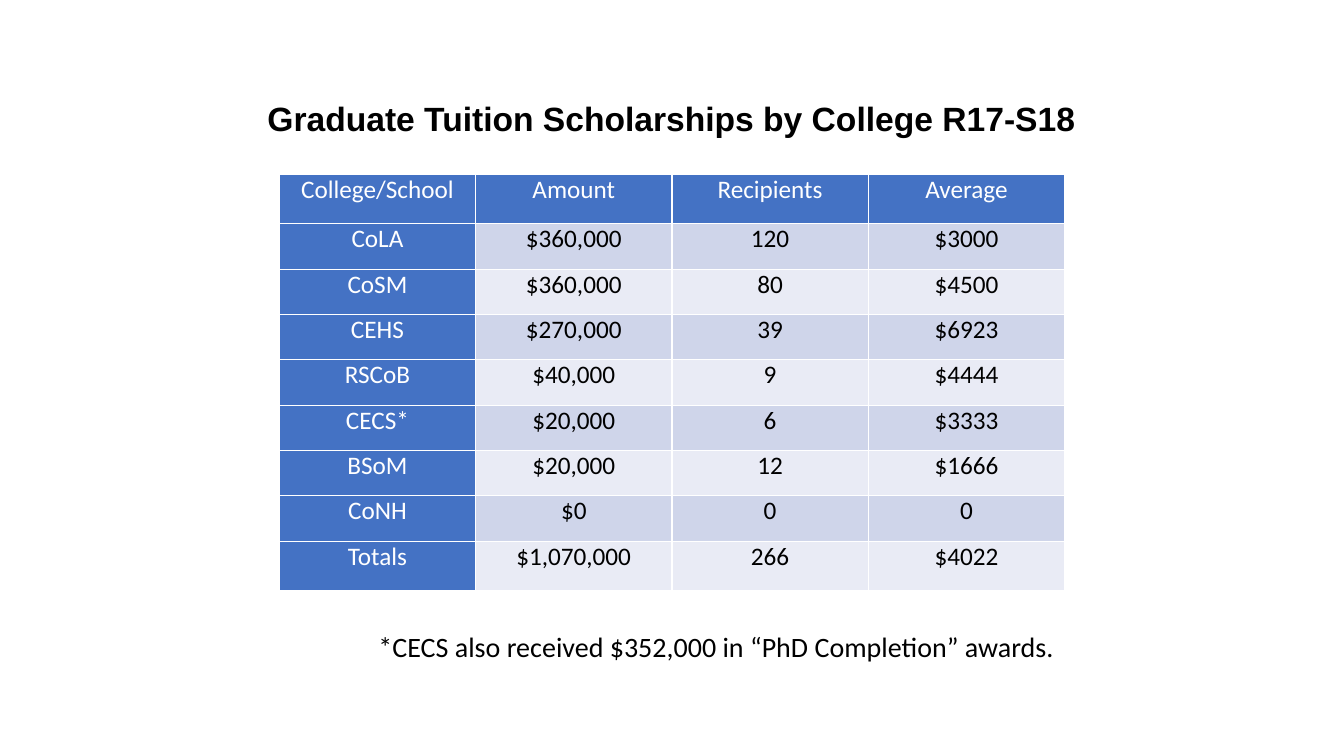
from lxml import etree
from pptx import Presentation, util as u
from pptx.dml.color import RGBColor
from pptx.enum import text
from pptx.oxml import ns

TITLE = "Graduate Tuition Scholarships by College R17-S18"
NOTE = "*CECS also received $352,000 in “PhD Completion” awards."
ROWS = [
    ("College/School", "Amount", "Recipients", "Average"),
    ("CoLA", "$360,000", "120", "$3000"),
    ("CoSM", "$360,000", "80", "$4500"),
    ("CEHS", "$270,000", "39", "$6923"),
    ("RSCoB", "$40,000", "9", "$4444"),
    ("CECS*", "$20,000", "6", "$3333"),
    ("BSoM", "$20,000", "12", "$1666"),
    ("CoNH", "$0", "0", "0"),
    ("Totals", "$1,070,000", "266", "$4022"),
]
BLUE, WHITE, BLACK = "4472C4", "FFFFFF", "000000"
BANDS = ("E9EBF5", "CFD5EA")
LEFT, TOP, WIDTH = 2.77, 1.73, 7.79
TALL, LOW = 0.49, 0.45  # outer rows, inner rows


def paint(fill, hue):
    fill.solid()
    fill.fore_color.rgb = RGBColor.from_string(hue)


def write(frame, words, size, hue, face="Calibri", bold=False):
    para = frame.paragraphs[0]
    para.text = words
    para.alignment = text.PP_ALIGN.CENTER
    font = para.font
    font.name, font.size, font.bold = face, u.Pt(size), bold
    paint(font.fill, hue)


def label(slide, box, words, size, wrap, **style):
    frame = slide.shapes.add_textbox(*map(u.Inches, box)).text_frame
    frame.word_wrap = wrap
    write(frame, words, size, BLACK, **style)


def edge(cell):
    """Draw a thin white line on each side; call before filling the cell."""
    props = cell._tc.get_or_add_tcPr()
    for side in "LRTB":
        line = etree.SubElement(props, ns.qn(f"a:ln{side}"), w=str(u.Pt(1)))
        solid = etree.SubElement(line, ns.qn("a:solidFill"))
        etree.SubElement(solid, ns.qn("a:srgbClr"), val=WHITE)


def grid(slide):
    count, cols = len(ROWS), len(ROWS[0])
    highs = [TALL] + [LOW] * (count - 2) + [TALL]
    box = map(u.Inches, (LEFT, TOP, WIDTH, sum(highs)))
    table = slide.shapes.add_table(count, cols, *box).table
    for col in table.columns:
        col.width = u.Inches(WIDTH / cols)
    for r, (row, high) in enumerate(zip(ROWS, highs)):
        table.rows[r].height = u.Inches(high)
        for c, words in enumerate(row):
            head = r == 0 or c == 0
            cell = table.cell(r, c)
            cell.margin_left = cell.margin_right = u.Inches(0.07)
            cell.margin_top = cell.margin_bottom = 0
            edge(cell)
            paint(cell.fill, BLUE if head else BANDS[r % 2])
            write(cell.text_frame, words, 18, WHITE if head else BLACK)


def main():
    deck = Presentation()
    deck.slide_width, deck.slide_height = u.Inches(13.33), u.Inches(7.5)
    slide = deck.slides.add_slide(deck.slide_layouts[6])
    label(slide, (2.03, 0.92, 9.26, 0.5), TITLE, 24, True,
          face="Arial", bold=True)
    grid(slide)
    label(slide, (3.64, 6.2, 6.93, 0.44), NOTE, 20, False)
    deck.save("out.pptx")


if __name__ == "__main__":
    main()
